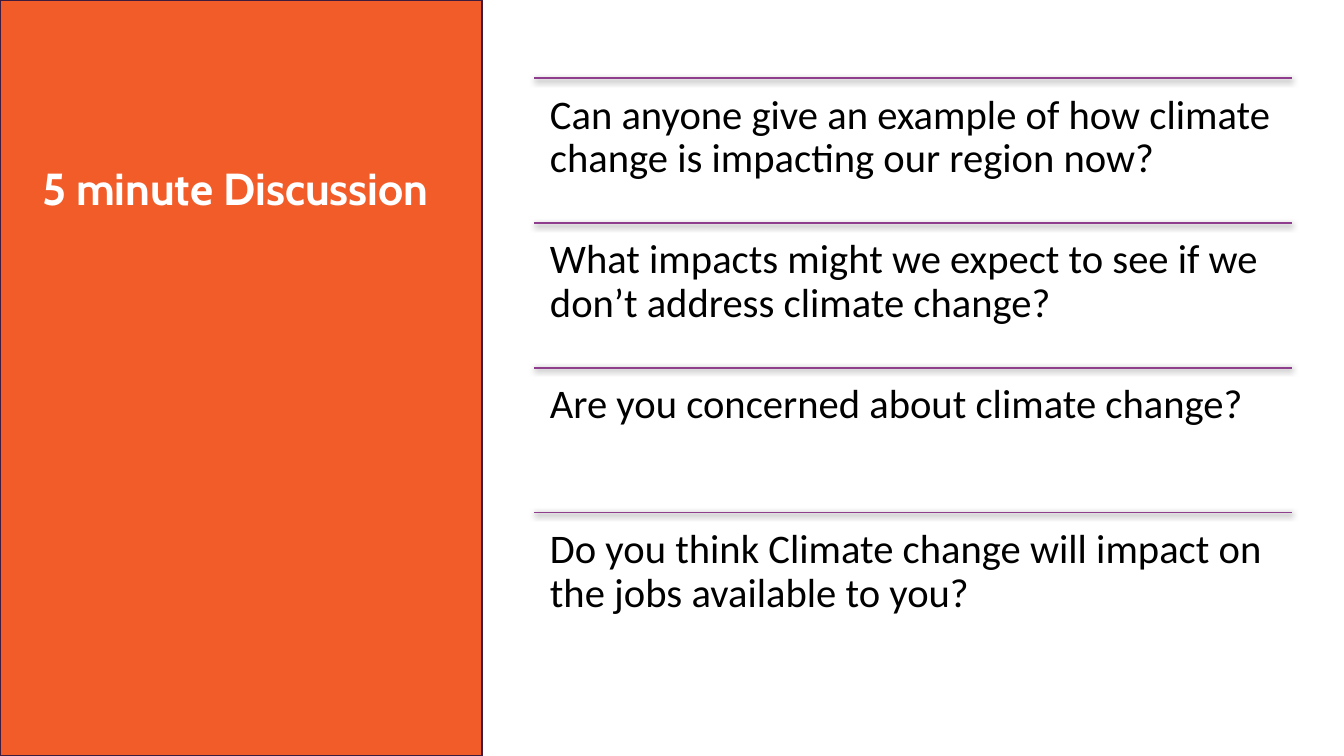
from dataclasses import dataclass

from pptx import Presentation
from pptx.dml.color import RGBColor as Rgb
from pptx.enum.shapes import MSO_CONNECTOR as Link, MSO_SHAPE as Kind
from pptx.enum.text import MSO_ANCHOR as Anchor
from pptx.oxml import parse_xml
from pptx.oxml.ns import nsdecls
from pptx.util import Cm, Pt

SHADOW = (
    f'<a:effectLst {nsdecls("a")}>'
    '<a:outerShdw blurRad="57150" dist="19050" dir="5400000" algn="ctr" rotWithShape="0">'
    '<a:srgbClr val="000000"><a:alpha val="63000"/></a:srgbClr>'
    '</a:outerShdw></a:effectLst>'
)

ASKS = [
    "Can anyone give an example of how climate change is impacting our region now?",
    "What impacts might we expect to see if we don’t address climate change?",
    "Are you concerned about climate change?",
    "Do you think Climate change will impact on the jobs available to you?",
]


@dataclass(frozen=True)
class Theme:
    """Colours, fonts and type sizes of the slide."""

    panel: str = "F25C29"
    edge: str = "3F1B3E"
    rule: str = "8F3E8D"
    light: str = "FFFFFF"
    ink: str = "000000"
    head: str = "Cabin"
    body: str = "Calibri"
    big: float = 32
    text: float = 29


def write(frame, text, font, size, color, bold=False, after=0):
    """Put one formatted paragraph into a text frame."""
    para = frame.paragraphs[0]
    para.line_spacing = 0.9
    para.space_after = Pt(after)
    run = para.add_run()
    run.text = text
    run.font.name = font
    run.font.size = Pt(size)
    run.font.bold = bold
    run.font.color.rgb = Rgb.from_string(color)


class Board:
    """Draws styled elements on one slide."""

    def __init__(self, slide, theme):
        """Keep the slide and its theme."""
        self.slide = slide
        self.theme = theme

    def panel(self, wide, high):
        """Draw the coloured panel at the left edge."""
        box = self.slide.shapes.add_shape(Kind.RECTANGLE, 0, 0, Cm(wide), Cm(high))
        box.shadow.inherit = False
        box.fill.solid()
        box.fill.fore_color.rgb = Rgb.from_string(self.theme.panel)
        box.line.color.rgb = Rgb.from_string(self.theme.edge)
        box.line.width = Pt(1.5)

    def rule(self, left, right, top):
        """Draw a level line with a soft shadow."""
        line = self.slide.shapes.add_connector(
            Link.STRAIGHT, Cm(left), Cm(top), Cm(right), Cm(top))
        line.line.color.rgb = Rgb.from_string(self.theme.rule)
        line.line.width = Pt(1)
        line.element.spPr.append(parse_xml(SHADOW))

    def label(self, text, left, top, wide, high, pad=(0.25, 0.13),
              anchor=Anchor.TOP, **form):
        """Add a wrapped text box."""
        box = self.slide.shapes.add_textbox(Cm(left), Cm(top), Cm(wide), Cm(high))
        frame = box.text_frame
        frame.word_wrap = True
        frame.vertical_anchor = anchor
        frame.margin_left = frame.margin_right = Cm(pad[0])
        frame.margin_top = frame.margin_bottom = Cm(pad[1])
        write(frame, text, **form)


def main():
    """Build and save the slide."""
    deck = Presentation()
    deck.slide_width, deck.slide_height = Cm(33.87), Cm(19.05)
    theme = Theme()
    board = Board(deck.slides.add_slide(deck.slide_layouts[6]), theme)

    board.panel(12.14, 19.05)
    board.label("5 minute Discussion", 0.81, 3.89, 10.44, 1.83, anchor=Anchor.MIDDLE,
                font=theme.head, size=theme.big, color=theme.light, bold=True)

    first, step = 1.97, 3.65
    for row, ask in enumerate(ASKS):
        top = first + row * step
        board.rule(13.46, 32.56, top)
        board.label(ask, 13.56, top + 0.1, 18.9, 3.43, pad=(0.3, 0.3),
                    font=theme.body, size=theme.text, color=theme.ink, after=10)
    deck.save("out.pptx")


if __name__ == "__main__":
    main()
